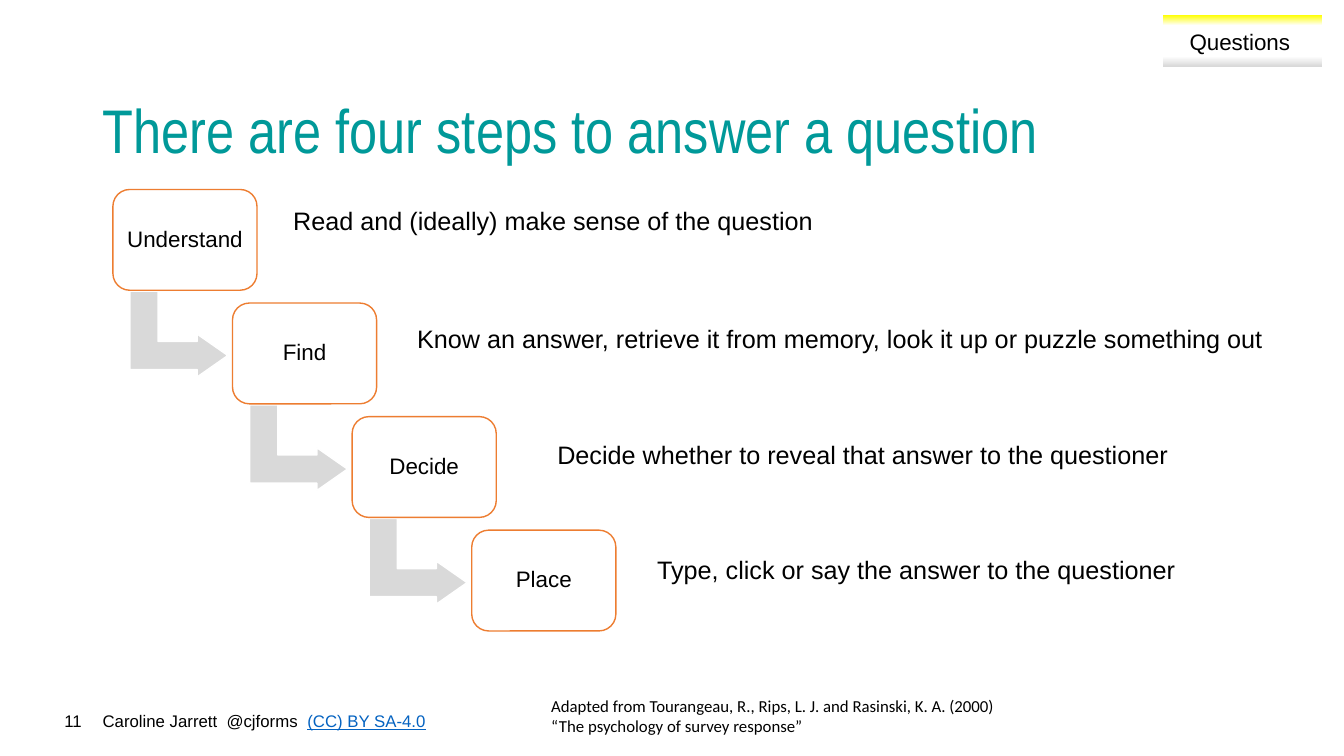
import pptx
import pptx.util
import pptx.dml.color
import pptx.enum.shapes
import pptx.enum.text
import pptx.oxml
import pptx.oxml.ns

Pt = pptx.util.Pt
Kind = pptx.enum.shapes.MSO_SHAPE
Side = pptx.enum.text.PP_ALIGN
Mid = pptx.enum.text.MSO_ANCHOR

COLORS = {
    "ink": "000000", "teal": "009999", "orange": "ED7D31", "grey": "D9D9D9",
    "white": "FFFFFF", "yellow": "FFFF00", "link": "0563C1",
}
COLS, ROWS = 80, 45


def tint(name):
    return pptx.dml.color.RGBColor.from_string(COLORS[name])


class Deck:
    font = "Arial"

    def __init__(self):
        self.file = pptx.Presentation()
        self.file.slide_width = pptx.util.Inches(13.33)
        self.file.slide_height = pptx.util.Inches(7.5)
        self.slide = self.file.slides.add_slide(self.file.slide_layouts[5])

    def place(self, x, y, w, h):
        col = self.file.slide_width / COLS
        row = self.file.slide_height / ROWS
        return round(x * col), round(y * row), round(w * col), round(h * row)

    def style(self, run, size, font=None, color="ink"):
        run.font.size = Pt(size)
        run.font.name = font or self.font
        run.font.color.rgb = tint(color)

    def fill_text(self, frame, text, size, font=None, color="ink", align=Side.LEFT, space=None):
        frame.text = text
        frame.word_wrap = True
        for para in frame.paragraphs:
            para.alignment = align
            para.line_spacing = space
            for run in para.runs:
                self.style(run, size, font, color)

    def title(self, text, area):
        shape = self.slide.shapes.title
        shape.left, shape.top, shape.width, shape.height = self.place(*area)
        frame = shape.text_frame
        frame.auto_size = pptx.enum.text.MSO_AUTO_SIZE.NONE
        frame.vertical_anchor = Mid.MIDDLE
        self.fill_text(frame, text, 44, "Arial Narrow", "teal", space=0.9)

    def label(self, text, area, size, **look):
        frame = self.slide.shapes.add_textbox(*self.place(*area)).text_frame
        self.fill_text(frame, text, size, **look)
        return frame

    def shape(self, kind, area, fill, line=None, knobs=()):
        shape = self.slide.shapes.add_shape(kind, *self.place(*area))
        shape.shadow.inherit = False
        shape.fill.solid()
        shape.fill.fore_color.rgb = tint(fill)
        if line:
            shape.line.color.rgb = tint(line)
            shape.line.width = Pt(1)
        else:
            shape.line.fill.background()
        for i, knob in enumerate(knobs):
            shape.adjustments[i] = knob
        return shape

    def box(self, text, area):
        shape = self.shape(Kind.ROUNDED_RECTANGLE, area, "white", "orange", [0.167])
        frame = shape.text_frame
        frame.margin_left = frame.margin_right = pptx.util.Inches(0.07)
        frame.margin_top = frame.margin_bottom = pptx.util.Inches(0.07)
        frame.vertical_anchor = Mid.MIDDLE
        self.fill_text(frame, text, 16, align=Side.CENTER, space=0.9)

    def arrow(self, area):
        shape = self.shape(Kind.BENT_UP_ARROW, area, "grey", "white", [0.328, 0.25, 0.358])
        shape.rotation = 90

    def fade(self, area, stops):
        shape = self.shape(Kind.RECTANGLE, area, "white")
        marks = "".join(
            f'<a:gs pos="{share * 1000}"><a:srgbClr val="{COLORS[name]}"/></a:gs>'
            for share, name in stops)
        grad = pptx.oxml.parse_xml(
            f'<a:gradFill {pptx.oxml.ns.nsdecls("a")}><a:gsLst>{marks}</a:gsLst>'
            '<a:lin ang="5400000" scaled="0"/></a:gradFill>')
        props = shape.element.spPr
        props.replace(props.find(pptx.oxml.ns.qn("a:solidFill")), grad)


STEPS = [
    ("Understand", "Read and (ideally) make sense of the question", 16.86, 11.94, 32.88),
    ("Find", "Know an answer, retrieve it from memory, look it up or puzzle something out",
     24.24, 18.96, 52.02),
    ("Decide", "Decide whether to reveal that answer to the questioner", 32.58, 25.86, 37.92),
    ("Place", "Type, click or say the answer to the questioner", 38.52, 32.7, 32.34),
]


def main():
    deck = Deck()
    foot = deck.label("Caroline Jarrett  @cjforms  ", (5.52, 42, 34.26, 1.8), 12)
    terms = foot.paragraphs[0].add_run()
    terms.text = "(CC) BY SA-4.0"
    deck.style(terms, 12, color="link")
    terms.font.underline = True
    deck.label("11", (-1.5, 42, 6.96, 1.8), 12, align=Side.RIGHT)
    deck.title("There are four steps to answer a question", (5.52, 3.6, 69, 8.7))

    for i, (step, note, x, y, width) in enumerate(STEPS):
        left, top = 6.72 + 7.12 * i, 11.28 + 6.76 * i
        if i < len(STEPS) - 1:
            deck.arrow((left + 1.38, top + 5.7, 5.1, 5.82))
        deck.box(step, (left, top, 8.58, 6))
        deck.label(note, (x, y, width, 2.4), 18)

    deck.label("Adapted from Tourangeau, R., Rips, L. J. and Rasinski, K. A. (2000)\v"
               "“The psychology of survey response”",
               (32.22, 41.1, 37.44, 3), 12, font="Calibri")
    deck.fade((69.24, 0.9, 9.48, 3.06),
              [(0, "yellow"), (20, "white"), (80, "white"), (100, "grey")])
    deck.label("Questions", (69.12, 1.38, 9.36, 2.22), 16, align=Side.CENTER)
    deck.file.save("out.pptx")


if __name__ == "__main__":
    main()
